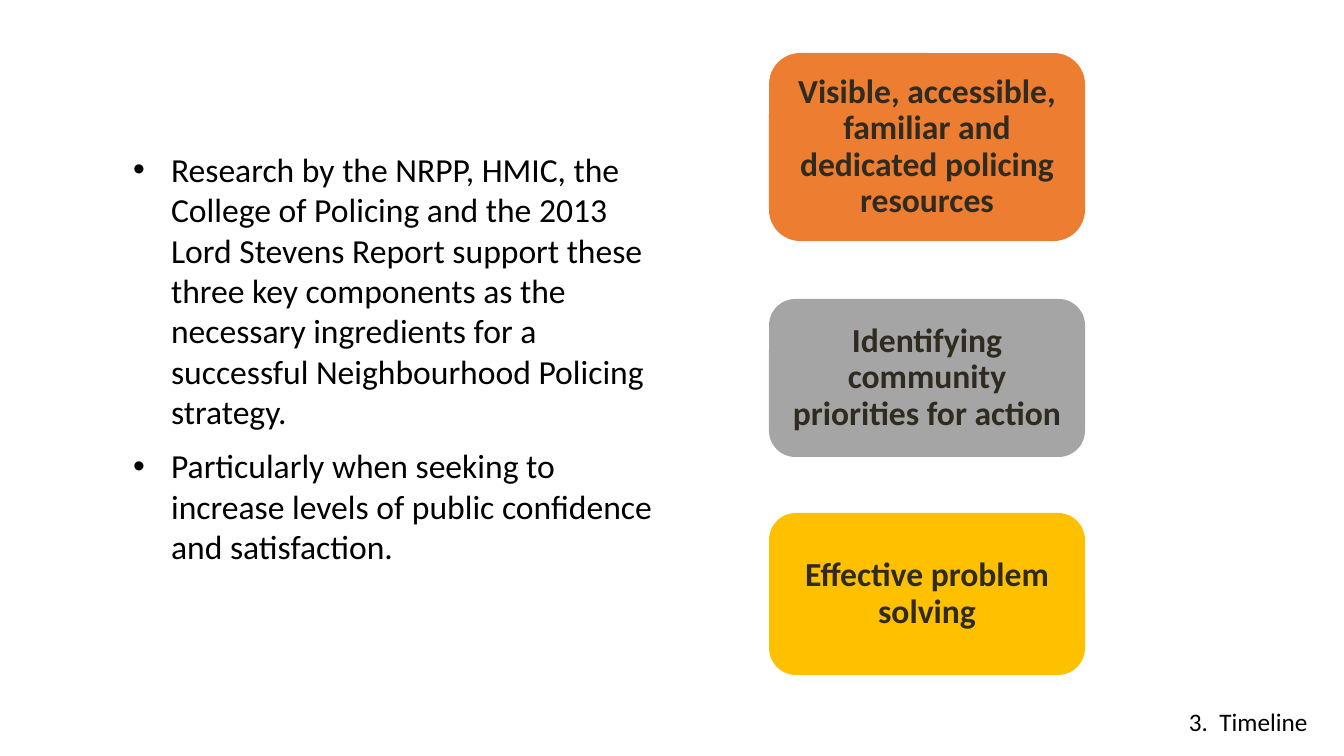
from lxml.etree import SubElement
from pptx import Presentation
from pptx.dml.color import RGBColor
from pptx.enum.shapes import MSO_SHAPE
from pptx.enum.text import MSO_ANCHOR, MSO_AUTO_SIZE, PP_ALIGN
from pptx.oxml.ns import qn
from pptx.util import Pt

PIXEL = 12192000 / 1344
BLACK = RGBColor(0x00, 0x00, 0x00)
DARK_BROWN = RGBColor(0x2F, 0x2B, 0x20)
ORANGE = RGBColor(0xED, 0x7D, 0x31)
GREY = RGBColor(0xA5, 0xA5, 0xA5)
GOLD = RGBColor(0xFF, 0xC0, 0x00)


def px(length):
    return round(length * PIXEL)


def set_font(paragraph, size, color, bold=False):
    paragraph.font.name = "Calibri"
    paragraph.font.size = Pt(size)
    paragraph.font.color.rgb = color
    paragraph.font.bold = bold


presentation = Presentation()
presentation.slide_width = px(1344)
presentation.slide_height = px(756)
slide = presentation.slides.add_slide(presentation.slide_layouts[1])
title = slide.shapes.title
title.element.getparent().remove(title.element)

# Bulleted findings
findings = [
    "Research by the NRPP, HMIC, the College of Policing and the 2013 Lord Stevens "
    "Report support these three key components as the necessary ingredients for a "
    "successful Neighbourhood Policing strategy.",
    "Particularly when seeking to increase levels of public confidence and satisfaction.",
]
body = slide.placeholders[1]
body.left, body.top, body.width, body.height = px(111), px(144), px(560), px(467)
body_frame = body.text_frame
body_frame.text = "\n".join(findings)
body_frame.auto_size = MSO_AUTO_SIZE.NONE
for paragraph in body_frame.paragraphs:
    set_font(paragraph, 24, BLACK)
    paragraph.space_before = Pt(10)
    properties = paragraph._p.get_or_add_pPr()
    properties.set("marL", str(px(50)))
    properties.set("indent", str(px(-38)))
    SubElement(properties, qn("a:buFont"), typeface="Arial")
    SubElement(properties, qn("a:buChar"), char="•")
    # The bullet must come before the default run properties
    defaults = properties.find(qn("a:defRPr"))
    if defaults is not None:
        properties.append(defaults)

# Key components: top, height, colour, text
components = [
    (53, 188, ORANGE, "Visible, accessible, familiar and dedicated policing resources"),
    (299, 158, GREY, "Identifying community priorities for action"),
    (513, 162, GOLD, "Effective problem solving"),
]
for top, height, color, text in components:
    box = slide.shapes.add_shape(
        MSO_SHAPE.ROUNDED_RECTANGLE, px(769), px(top), px(316), px(height))
    box.shadow.inherit = False
    box.fill.solid()
    box.fill.fore_color.rgb = color
    box.line.fill.background()
    # The rounded corners already inset the text by 9 px
    frame = box.text_frame
    frame.word_wrap = True
    frame.vertical_anchor = MSO_ANCHOR.MIDDLE
    frame.margin_left = frame.margin_right = px(10)
    frame.margin_top = frame.margin_bottom = 0
    frame.text = text
    paragraph = frame.paragraphs[0]
    paragraph.alignment = PP_ALIGN.CENTER
    paragraph.line_spacing = 0.9
    set_font(paragraph, 24, DARK_BROWN, bold=True)

# Section label
label = slide.shapes.add_textbox(px(1179), px(701), px(152), px(40))
label.text_frame.word_wrap = True
label.text_frame.text = "3.  Timeline"
set_font(label.text_frame.paragraphs[0], 18, BLACK)

presentation.save("out.pptx")
